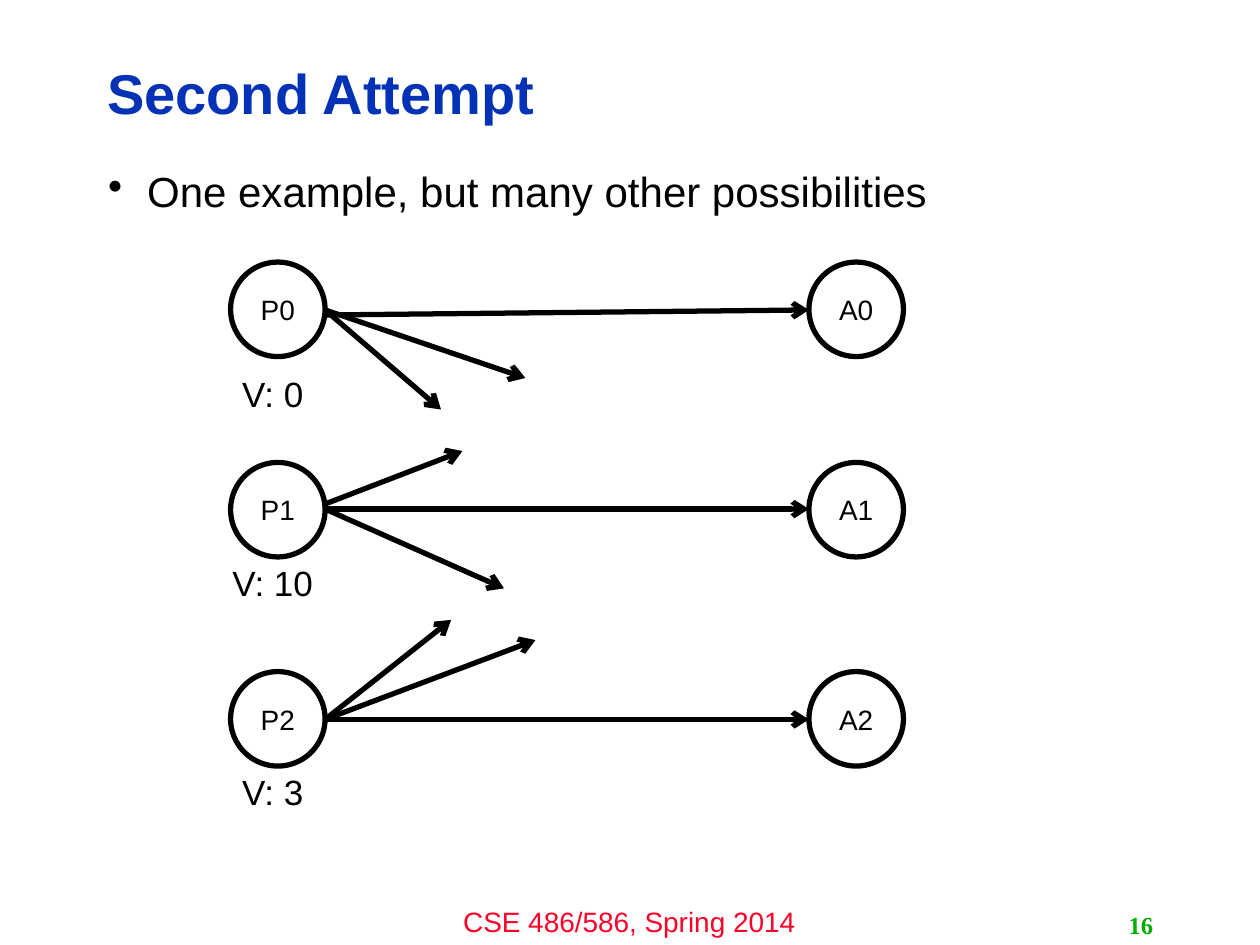
from pptx import Presentation
from pptx.dml.color import RGBColor
from pptx.enum import shapes, text
from pptx.oxml import parse_xml
from pptx.oxml.ns import nsdecls
from pptx.util import Inches, Pt

BLACK = "000000"
SIZE = 0.75
LEFT, RIGHT = 1.83, 6.42
EDGE = LEFT + SIZE
ROWS = [
    (2.08, "V: 0", 2.9, [(2.5, RIGHT, 2.46), (2.46, 4.17, 3), (2.46, 3.5, 3.25)]),
    (3.67, "V: 10", 4.4, [(4.04, RIGHT, 4.04), (4, 3.67, 3.58), (4.04, 4, 4.67)]),
    (5.33, "V: 3", 6.06, [(5.71, RIGHT, 5.71), (5.71, 4.25, 5.08), (5.71, 3.58, 4.92)]),
]


def color(code):
    """Turn a hex string into a colour."""
    return RGBColor.from_string(code)


def write(shape, words, size, code=BLACK, face="Arial", bold=False,
          align=text.PP_ALIGN.CENTER, anchor=text.MSO_ANCHOR.MIDDLE, wrap=True):
    """Put one styled paragraph into a shape and return it."""
    frame = shape.text_frame
    frame.text = words
    frame.word_wrap = wrap
    frame.vertical_anchor = anchor
    para = frame.paragraphs[0]
    para.alignment = align
    font = para.runs[0].font
    font.size, font.name, font.bold = Pt(size), face, bold
    font.color.rgb = color(code)
    return para


def label(slide, box, words, size, **style):
    """Add a text box and return its paragraph."""
    shape = slide.shapes.add_textbox(*map(Inches, box))
    return write(shape, words, size, **style)


def title(slide, box, words):
    """Place and format the slide title."""
    shape = slide.shapes.title
    shape.left, shape.top, shape.width, shape.height = map(Inches, box)
    para = write(shape, words, 32, "0332B7", bold=True, align=text.PP_ALIGN.LEFT)
    para.line_spacing = 0.9


def bullet(slide, box, words):
    """Add a text box with one bulleted line."""
    para = label(slide, box, words, 24, align=text.PP_ALIGN.LEFT,
                 anchor=text.MSO_ANCHOR.TOP)
    para.line_spacing = 0.9
    props = para._p.get_or_add_pPr()
    props.set("marL", str(Inches(0.31)))
    props.set("indent", str(-Inches(0.31)))
    props.append(parse_xml(f'<a:buChar {nsdecls("a")} char="•"/>'))


def node(slide, left, top, words):
    """Add a named circle."""
    shape = slide.shapes.add_shape(
        shapes.MSO_SHAPE.OVAL, *map(Inches, (left, top, SIZE, SIZE)))
    shape.shadow.inherit = False
    shape.fill.solid()
    shape.fill.fore_color.rgb = color("FFFFFF")
    shape.line.color.rgb = color(BLACK)
    shape.line.width = Pt(3)
    write(shape, words, 16)


def arrow(slide, *ends):
    """Add a straight arrow between two points."""
    line = slide.shapes.add_connector(
        shapes.MSO_CONNECTOR.STRAIGHT, *map(Inches, ends))
    line.line.color.rgb = color(BLACK)
    line.line.width = Pt(3)
    line.line._get_or_add_ln().append(
        parse_xml(f'<a:tailEnd {nsdecls("a")} type="arrow"/>'))
    line._element.spPr.append(parse_xml(f'<a:effectLst {nsdecls("a")}/>'))


def main():
    """Build and save the slide."""
    deck = Presentation()
    deck.slide_width, deck.slide_height = Inches(10), Inches(7.5)
    slide = deck.slides.add_slide(deck.slide_layouts[5])
    label(slide, (3.33, 7.13, 3.33, 0.37), "CSE 486/586, Spring 2014", 16,
          code="FC0128")
    title(slide, (0.75, 0.36, 7.98, 0.81), "Second Attempt")
    bullet(slide, (0.76, 1.31, 8.4, 5.39),
           "One example, but many other possibilities")
    label(slide, (7.17, 7.18, 2.08, 0.32), "16", 14, code="00AE00",
          face="Times New Roman", bold=True, align=text.PP_ALIGN.RIGHT, wrap=False)
    for i, (top, value, below, paths) in enumerate(ROWS):
        node(slide, LEFT, top, f"P{i}")
        node(slide, RIGHT, top, f"A{i}")
        label(slide, (1.58, below, 1.17, 0.44), value, 20)
        for start, x, y in paths:
            arrow(slide, EDGE, start, x, y)
    deck.save("out.pptx")


if __name__ == "__main__":
    main()
